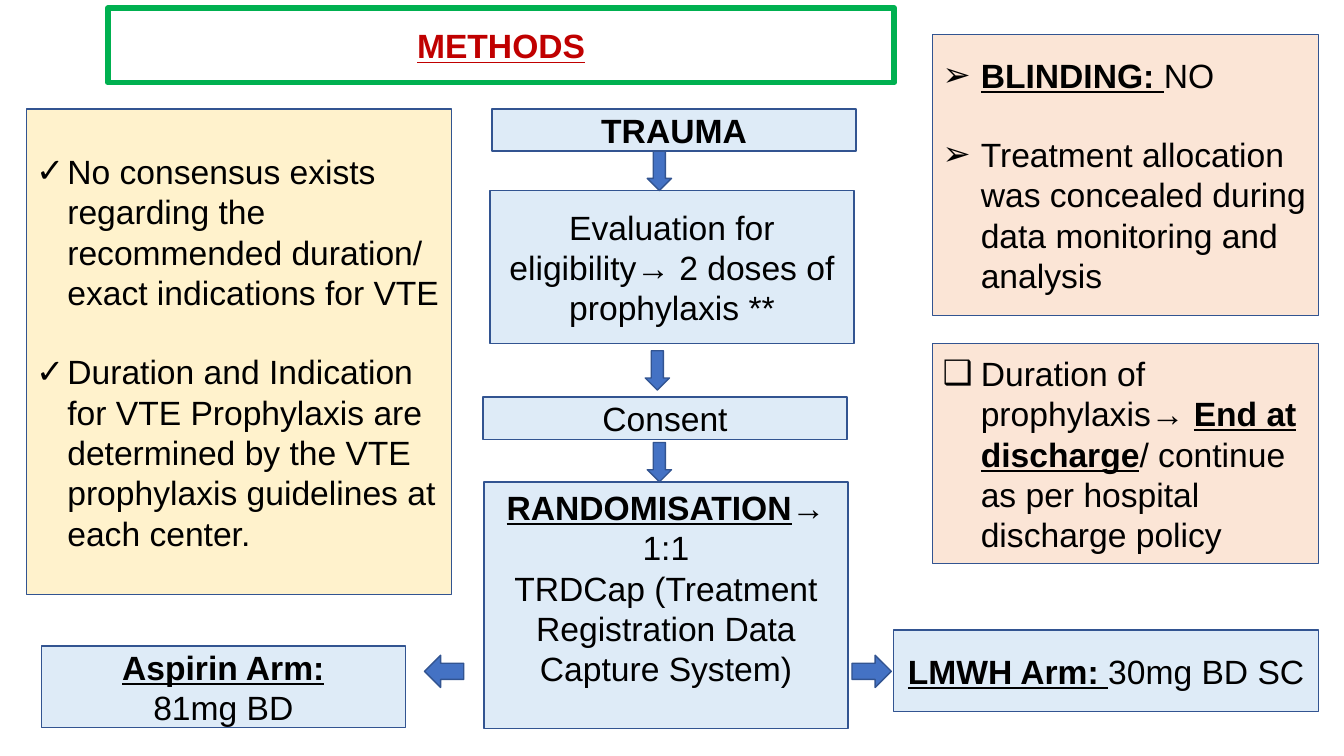
from dataclasses import dataclass

from lxml import etree
from pptx import Presentation
from pptx import util as u
from pptx.dml.color import RGBColor
from pptx.enum import shapes, text
from pptx.oxml.ns import qn


@dataclass(frozen=True)
class Theme:
    font: str = "Arial"
    size: int = 24
    gap: int = 28
    ink: str = "000000"
    heading: str = "C00000"
    frame: str = "00B050"
    edge: str = "325491"
    paper: str = "FFFFFF"
    step: str = "DEEBF7"
    arrow: str = "4472C4"
    guidance: str = "FFF2CC"
    conduct: str = "FBE5D6"


THEME = Theme()
SHAPE = shapes.MSO_SHAPE
STRONG = True


def draw(slide, kind, box, fill, edge=THEME.edge, weight=1):
    shape = slide.shapes.add_shape(kind, *(u.Inches(n) for n in box))
    shape.shadow.inherit = False
    shape.fill.solid()
    shape.fill.fore_color.rgb = RGBColor.from_string(fill)
    shape.line.color.rgb = RGBColor.from_string(edge)
    shape.line.width = u.Pt(weight)
    return shape


def write(shape, paragraphs, colour=THEME.ink):
    """Fill a shape with paragraphs, each a list of (words, strong) runs."""
    frame = shape.text_frame
    frame.word_wrap = True
    frame.vertical_anchor = text.MSO_ANCHOR.MIDDLE
    for index, runs in enumerate(paragraphs):
        paragraph = frame.add_paragraph() if index else frame.paragraphs[0]
        paragraph.alignment = text.PP_ALIGN.CENTER
        paragraph.font.name = THEME.font
        paragraph.font.size = u.Pt(THEME.size)
        paragraph.font.color.rgb = RGBColor.from_string(colour)
        for words, strong in runs:
            run = paragraph.add_run()
            run.text = words
            if strong:
                run.font.bold = run.font.underline = True
    return frame


def set_bullet(paragraph, mark, indent):
    properties = paragraph._p.get_or_add_pPr()
    properties.set("marL", str(u.Inches(indent)))
    properties.set("indent", str(-u.Inches(indent)))
    etree.SubElement(properties, qn("a:buFont")).set("typeface", THEME.font)
    etree.SubElement(properties, qn("a:buChar")).set("char", mark)


def add_title(slide, box):
    banner = draw(slide, SHAPE.RECTANGLE, box, THEME.paper, THEME.frame, 4)
    write(banner, [[("METHODS", STRONG)]], THEME.heading)


def add_notes(slide, box, fill, mark, indent, notes):
    """A coloured panel of bulleted notes."""
    frame = write(draw(slide, SHAPE.RECTANGLE, box, fill), notes)
    for index, paragraph in enumerate(frame.paragraphs):
        paragraph.alignment = text.PP_ALIGN.LEFT
        paragraph.space_before = u.Pt(THEME.gap if index else 0)
        set_bullet(paragraph, mark, indent)


def add_step(slide, box, paragraphs):
    return write(draw(slide, SHAPE.RECTANGLE, box, THEME.step), paragraphs)


def add_flow(slide, box):
    """Trial steps from trauma to randomisation, with arrows between them."""
    left, top, width, height = box
    trauma = add_step(slide, (left + 0.09, top, width, 0.42), [[("TRAUMA", False)]])
    trauma.paragraphs[0].font.bold = True
    add_step(slide, (left + 0.07, top + 0.81, width, 1.52),
             [[("Evaluation for eligibility→ 2 doses of prophylaxis **", False)]])
    add_step(slide, (left, top + 2.86, width, 0.42), [[("Consent", False)]])
    randomisation = add_step(
        slide, (left + 0.01, top + 3.7, width, height - 3.7),
        [[("RANDOMISATION", STRONG), ("→ 1:1", False)],
         [("TRDCap (Treatment Registration Data Capture System)", False)]])
    randomisation.vertical_anchor = text.MSO_ANCHOR.TOP
    for across, down in ((1.63, 0.42), (1.61, 2.4), (1.63, 3.31)):
        draw(slide, SHAPE.DOWN_ARROW, (left + across, top + down, 0.24, 0.39),
             THEME.arrow)


def add_arm(slide, box, paragraphs, arrow, arrow_left):
    """A treatment arm and the arrow that leads to it."""
    add_step(slide, box, paragraphs)
    draw(slide, arrow, (arrow_left, 6.5, 0.39, 0.32), THEME.arrow)


def main():
    deck = Presentation()
    deck.slide_width, deck.slide_height = u.Inches(13.33), u.Inches(7.5)
    slide = deck.slides.add_slide(deck.slide_layouts[6])

    add_title(slide, (1.07, 0.08, 7.8, 0.74))
    add_flow(slide, (4.79, 1.08, 3.61, 6.15))
    add_arm(slide, (8.86, 6.25, 4.22, 0.81),
            [[("LMWH Arm: ", STRONG), ("30mg BD SC", False)]],
            SHAPE.RIGHT_ARROW, 8.45)
    add_arm(slide, (0.41, 6.41, 3.61, 0.81),
            [[("Aspirin Arm:", STRONG)], [("81mg BD", False)]],
            SHAPE.LEFT_ARROW, 4.21)
    add_notes(slide, (9.25, 0.34, 3.83, 2.79), THEME.conduct, "➢", 0.38,
              [[("BLINDING: ", STRONG), ("NO", False)],
               [("Treatment allocation was concealed during data monitoring "
                 "and analysis", False)]])
    add_notes(slide, (0.26, 1.08, 4.22, 4.82), THEME.guidance, "✓", 0.31,
              [[("No consensus exists regarding the recommended duration/ "
                 "exact indications for VTE", False)],
               [("Duration and Indication for VTE Prophylaxis are determined "
                 "by the VTE prophylaxis guidelines at each center.", False)]])
    add_notes(slide, (9.25, 3.41, 3.83, 2.18), THEME.conduct, "❑", 0.38,
              [[("Duration of prophylaxis→ ", False),
                ("End at discharge", STRONG),
                ("/ continue as per hospital discharge policy", False)]])

    deck.save("out.pptx")


if __name__ == "__main__":
    main()
